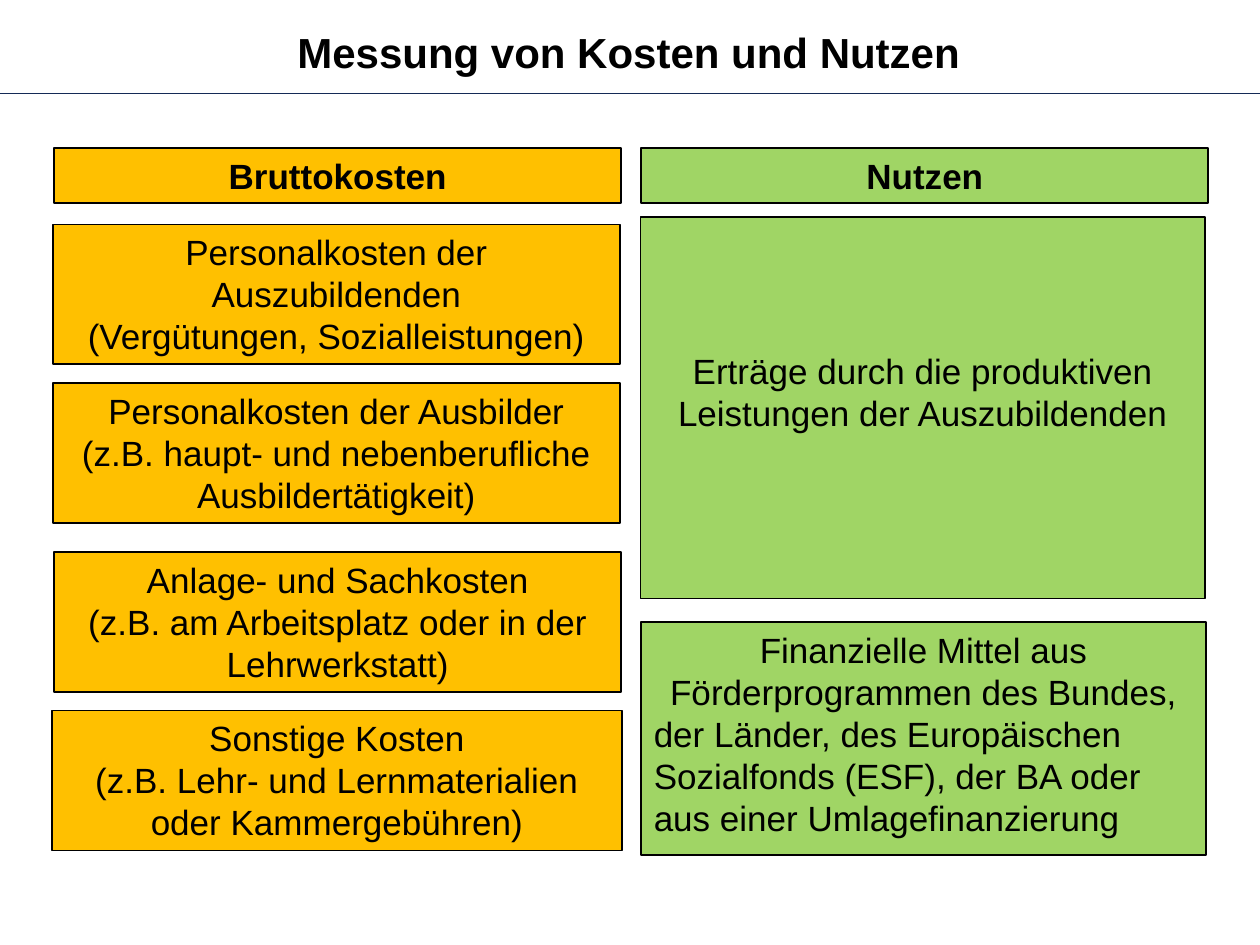
import pptx
import pptx.dml.color
import pptx.enum.shapes
import pptx.enum.text
import pptx.util
from lxml import etree

Pt = pptx.util.Pt
RGBColor = pptx.dml.color.RGBColor
CENTER = pptx.enum.text.PP_ALIGN.CENTER
LEFT = pptx.enum.text.PP_ALIGN.LEFT
TOP = pptx.enum.text.MSO_ANCHOR.TOP

COLORS = {"text": "000000", "rule": "142A56", "costs": "FFC000", "benefits": "A0D565"}


def format_text(text_frame, size, bold):
    for paragraph in text_frame.paragraphs:
        paragraph.alignment = CENTER
        for run in paragraph.runs:
            run.font.name = "Arial"
            run.font.size = Pt(size)
            run.font.bold = bold
            run.font.color.rgb = RGBColor.from_string(COLORS["text"])


def add_box(text, color, left, top, width, height, bold=False):
    box = slide.shapes.add_shape(
        pptx.enum.shapes.MSO_SHAPE.RECTANGLE, Pt(left), Pt(top), Pt(width), Pt(height))
    box.shadow.inherit = False
    box.fill.solid()
    box.fill.fore_color.rgb = RGBColor.from_string(COLORS[color])
    box.line.color.rgb = RGBColor.from_string(COLORS["text"])
    box.line.width = Pt(1)
    box.text_frame.word_wrap = True
    box.text_frame.vertical_anchor = TOP
    box.text_frame.text = text
    format_text(box.text_frame, 20, bold)
    return box


presentation = pptx.Presentation()
presentation.slide_width = Pt(720)
presentation.slide_height = Pt(540)
slide = presentation.slides.add_slide(presentation.slide_layouts[5])

# Title and rule
title = slide.shapes.title
title.left, title.top, title.width, title.height = Pt(47.5), Pt(11.5), Pt(623.5), Pt(34.5)
title.text_frame.text = "Messung von Kosten und Nutzen"
title.text_frame.vertical_anchor = TOP
format_text(title.text_frame, 24, True)

rule = slide.shapes.add_connector(
    pptx.enum.shapes.MSO_CONNECTOR.STRAIGHT, Pt(0), Pt(53.3), Pt(720), Pt(53.3))
rule.line.color.rgb = RGBColor.from_string(COLORS["rule"])
rule.line.width = Pt(0.75)
etree.SubElement(rule.line._get_or_add_ln().getparent(), pptx.oxml.ns.qn("a:effectLst"))

# Column headings
add_box("Bruttokosten", "costs", 31, 84.5, 324, 31.5, bold=True)
add_box("Nutzen", "benefits", 366.5, 84.5, 324, 31.5, bold=True)

# Gross costs: text, left, top, width
costs = [
    ("Personalkosten der Auszubildenden\n(Vergütungen, Sozialleistungen)", 30.25, 128.25, 324),
    ("Personalkosten der Ausbilder\n(z.B. haupt- und nebenberufliche\nAusbildertätigkeit)",
     30.25, 219, 324),
    ("Anlage- und Sachkosten\n(z.B. am Arbeitsplatz oder in der\nLehrwerkstatt)", 31, 315.5, 324),
    ("Sonstige Kosten\n(z.B. Lehr- und Lernmaterialien\voder Kammergebühren)", 29.75, 406, 325.5),
]
for text, left, top, width in costs:
    add_box(text, "costs", left, top, width, 80)

# Benefits
returns = add_box("Erträge durch die produktiven\nLeistungen der Auszubildenden",
                  "benefits", 366, 124, 322.5, 218)
returns.text_frame.margin_top = Pt(75.6)

funding = add_box(
    "Finanzielle Mittel aus Förderprogrammen des Bundes,\n"
    "der Länder, des Europäischen Sozialfonds (ESF), der BA oder aus einer Umlagefinanzierung",
    "benefits", 366.5, 355.5, 322.5, 133)
funding.text_frame.paragraphs[1].alignment = LEFT

presentation.save("out.pptx")
